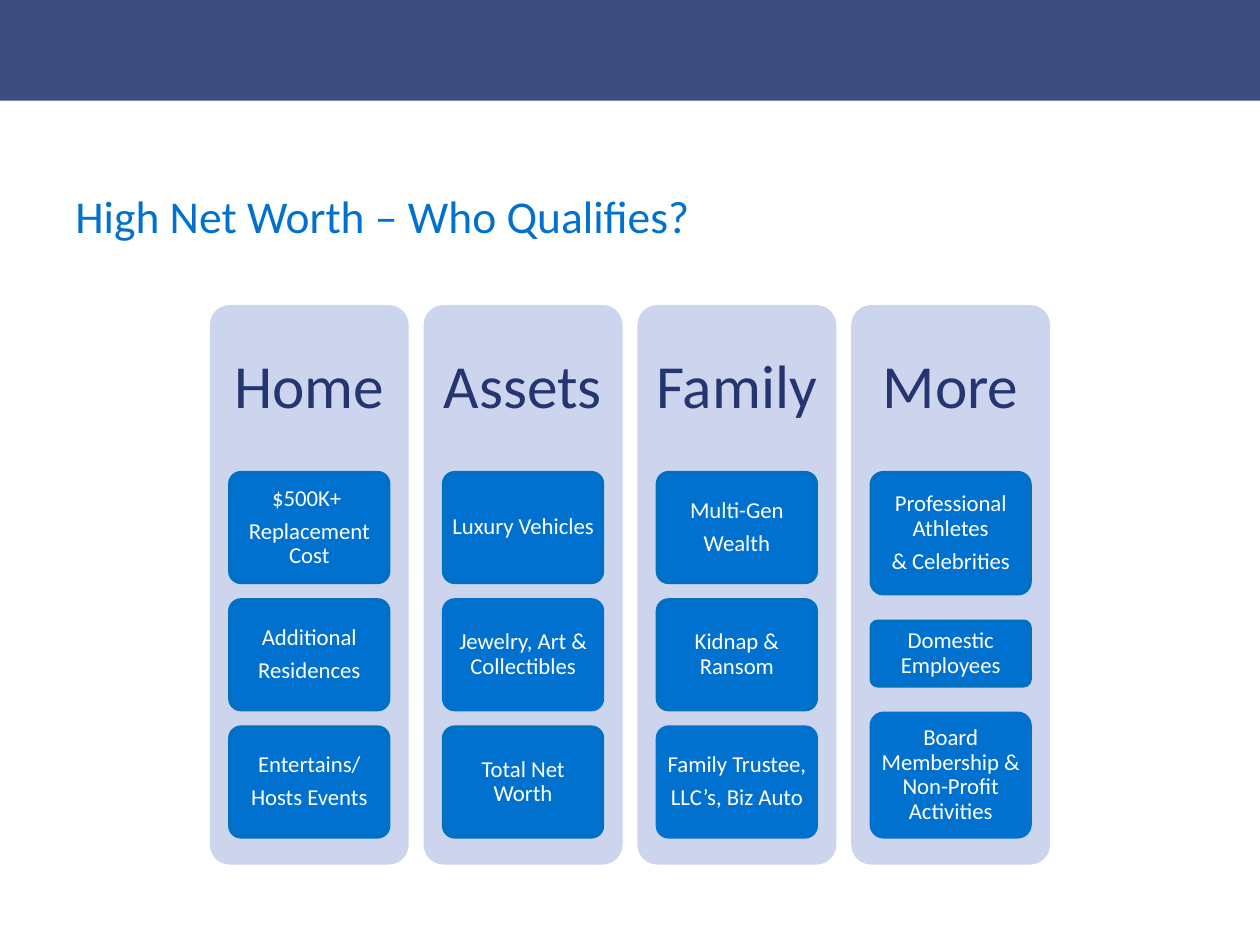
"""Build the slide on who qualifies as high net worth."""
from lxml import etree
from pptx import Presentation
from pptx.dml.color import RGBColor
from pptx.enum.shapes import MSO_SHAPE
from pptx.enum.text import MSO_ANCHOR, MSO_AUTO_SIZE, PP_ALIGN
from pptx.oxml.ns import qn
from pptx.util import Cm, Pt

RECTANGLE = MSO_SHAPE.RECTANGLE
ROUNDED = MSO_SHAPE.ROUNDED_RECTANGLE
MIDDLE = MSO_ANCHOR.MIDDLE
NO_FIT = MSO_AUTO_SIZE.NONE
LEFT, CENTER = PP_ALIGN.LEFT, PP_ALIGN.CENTER

COLORS = {
    "navy": "24356F",
    "blue": "0071CE",
    "edge": "0070C0",
    "panel": "CCD5ED",
    "white": "FFFFFF",
}
FORMATS = {
    "title": {"size": Pt(26), "color": "blue", "para": {"alignment": LEFT}},
    "heading": {"size": Pt(35), "color": "navy",
                "para": {"alignment": CENTER, "line_spacing": 0.9}},
    "card": {"size": Pt(13), "color": "white",
             "para": {"alignment": CENTER, "line_spacing": 0.9, "space_after": Pt(4.8)}},
}

PANEL_LEFT, PANEL_TOP, PANEL_WIDTH, PANEL_HEIGHT = 4.23, 6.15, 4.01, 11.28
PANEL_PITCH = 4.31
HEADING_HEIGHT = 3.38
CARD_WIDTH = 3.2
CARDS_HEIGHT = 7.34
EVEN_HEIGHTS = (2.21, 2.21, 2.21)
MIXED_HEIGHTS = (2.44, 1.3, 2.49)

COLUMNS = [
    ("Home", EVEN_HEIGHTS, [
        ("$500K+ \nReplacement Cost", "edge"),
        ("Additional\nResidences", "edge"),
        ("Entertains/\nHosts Events", "edge"),
    ]),
    ("Assets", EVEN_HEIGHTS, [
        ("Luxury Vehicles", "edge"),
        ("Jewelry, Art & Collectibles", "blue"),
        ("Total Net Worth", "edge"),
    ]),
    ("Family", EVEN_HEIGHTS, [
        ("Multi-Gen\nWealth", "edge"),
        ("Kidnap & Ransom", "edge"),
        ("Family Trustee,\nLLC’s, Biz Auto", "blue"),
    ]),
    ("More", MIXED_HEIGHTS, [
        ("Professional Athletes\n& Celebrities", "edge"),
        ("Domestic Employees", "edge"),
        ("Board Membership & Non-Profit Activities", "blue"),
    ]),
]


class SlideBuilder:
    """Hold the style and the current slide."""

    def __init__(self, page, font_name="Calibri"):
        """Keep the page and the font name."""
        self.page = page
        self.font_name = font_name

    def color(self, name):
        """Return a named colour."""
        return RGBColor.from_string(COLORS[name])

    def set_text(self, box, text, style, inset_x=0.25, inset_y=0.13):
        """Fill a box with formatted paragraphs."""
        frame = box.text_frame
        frame.text = text
        settings = {
            "word_wrap": True, "auto_size": NO_FIT, "vertical_anchor": MIDDLE,
            "margin_left": Cm(inset_x), "margin_right": Cm(inset_x),
            "margin_top": Cm(inset_y), "margin_bottom": Cm(inset_y),
        }
        for name, value in settings.items():
            setattr(frame, name, value)
        look = FORMATS[style]
        for para in frame.paragraphs:
            for name, value in look["para"].items():
                setattr(para, name, value)
            for span in para.runs:
                span.font.name = self.font_name
                span.font.size = look["size"]
                span.font.color.rgb = self.color(look["color"])

    def title(self, text, left, top, width, height):
        """Place the title placeholder."""
        box = self.page.shapes.title
        place = {"left": left, "top": top, "width": width, "height": height}
        for name, value in place.items():
            setattr(box, name, Cm(value))
        self.set_text(box, text, "title")

    def block(self, kind, left, top, width, height, fill, line=None):
        """Add a filled shape, outlined if a line colour is given."""
        box = self.page.shapes.add_shape(kind, Cm(left), Cm(top), Cm(width), Cm(height))
        box.shadow.inherit = False
        box.fill.solid()
        box.fill.fore_color.rgb = self.color(fill)
        if line:
            box.line.color.rgb = self.color(line)
            box.line.width = Pt(2)
        else:
            box.line.fill.background()
        if kind == ROUNDED:
            box.adjustments[0] = 0.1
        return box

    def band(self, width, height, opacity):
        """Add the translucent band along the top."""
        box = self.block(RECTANGLE, 0, 0, width, height, "navy")
        tint = box.element.spPr.find(qn("a:solidFill"))[0]
        etree.SubElement(tint, qn("a:alpha")).set("val", str(opacity * 1000))

    def heading(self, text, left):
        """Add the heading of a column."""
        box = self.page.shapes.add_textbox(
            Cm(left), Cm(PANEL_TOP), Cm(PANEL_WIDTH), Cm(HEADING_HEIGHT))
        self.set_text(box, text, "heading", 0.38, 0.38)

    def column(self, left, heading, heights, cards):
        """Add a panel with its heading and evenly spaced cards."""
        self.block(ROUNDED, left, PANEL_TOP, PANEL_WIDTH, PANEL_HEIGHT, "panel")
        self.heading(heading, left)
        gap = (CARDS_HEIGHT - sum(heights)) / (len(heights) - 1)
        card_left = left + (PANEL_WIDTH - CARD_WIDTH) / 2
        top = PANEL_TOP + HEADING_HEIGHT
        for (text, line), height in zip(cards, heights):
            card = self.block(ROUNDED, card_left, top, CARD_WIDTH, height, "blue", line)
            self.set_text(card, text, "card", 0.1, 0.08)
            top += height + gap


def main():
    """Build and save the deck."""
    deck = Presentation()
    deck.slide_width, deck.slide_height = Cm(25.4), Cm(19.05)
    builder = SlideBuilder(deck.slides.add_slide(deck.slide_layouts[5]))
    builder.band(25.4, 2.03, 88)
    builder.title("High Net Worth – Who Qualifies?", 1.27, 3.63, 16.89, 1.42)
    for index, (heading, heights, cards) in enumerate(COLUMNS):
        builder.column(PANEL_LEFT + index * PANEL_PITCH, heading, heights, cards)
    deck.save("out.pptx")


if __name__ == "__main__":
    main()
